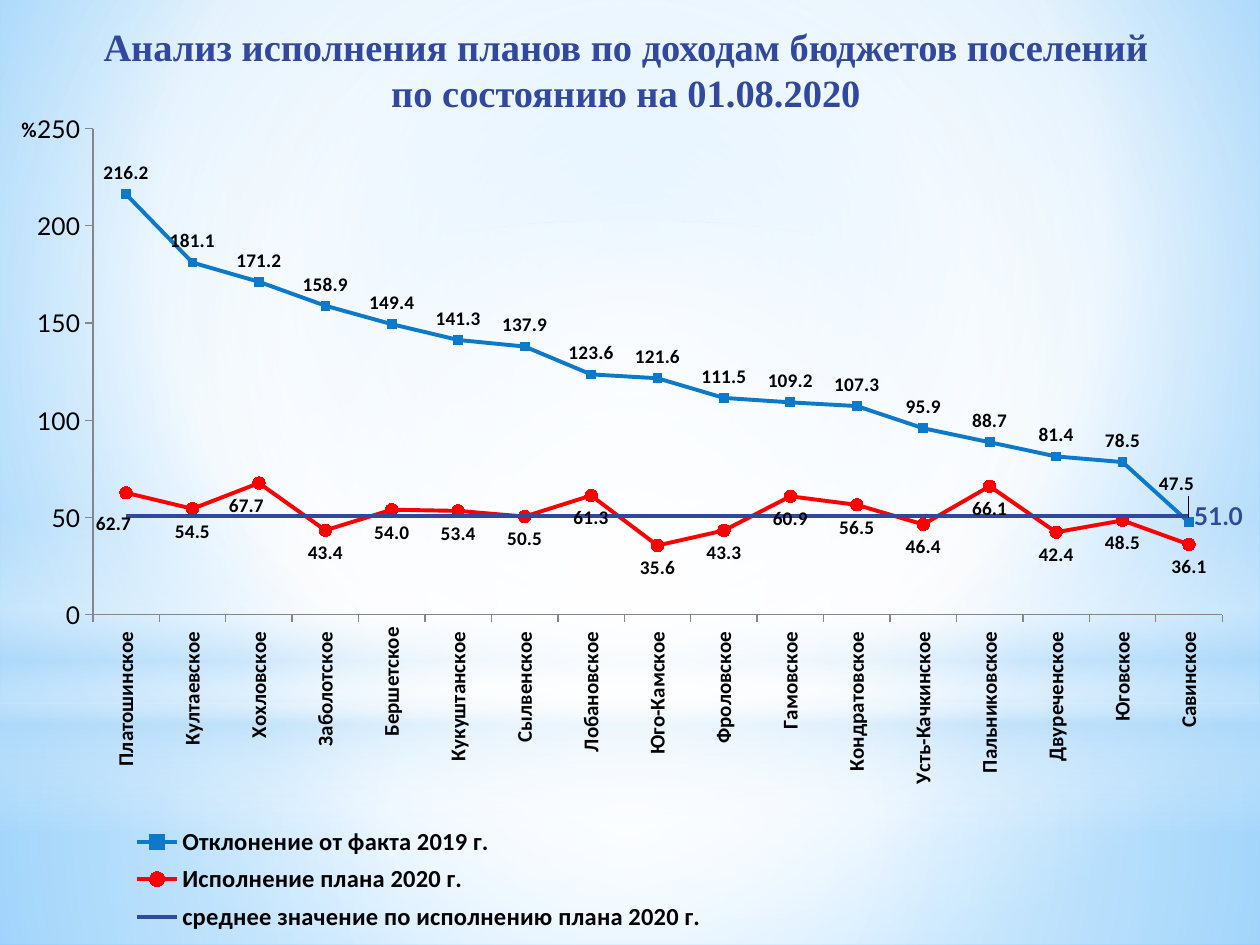
from lxml.etree import SubElement
from pptx import Presentation
from pptx.chart.data import CategoryChartData
from pptx.dml.color import RGBColor
from pptx.enum.chart import (XL_CHART_TYPE, XL_LABEL_POSITION, XL_LEGEND_POSITION,
                             XL_MARKER_STYLE, XL_TICK_MARK)
from pptx.enum.shapes import MSO_SHAPE
from pptx.enum.text import MSO_ANCHOR, MSO_AUTO_SIZE, PP_ALIGN
from pptx.oxml import parse_xml
from pptx.oxml.ns import qn
from pptx.util import Pt

COLORS = {"sky": "9ED5FF", "deep": "5BB9FF", "pale": "B4DCFA", "white": "FFFFFF",
          "navy": "31489F", "blue": "0D79CA", "red": "FF0000", "black": "000000",
          "axis": "868686"}
A_NS = "http://schemas.openxmlformats.org/drawingml/2006/main"
CENTRE = (50, 50, 50, 50)
LABEL_FONT = {"name": "Calibri", "size": Pt(11), "bold": True}

SETTLEMENTS = ["Платошинское ", "Култаевское ", "Хохловское ", "Заболотское ", "Бершетское",
               "Кукуштанское ", "Сылвенское ", "Лобановское ", "Юго-Камское ", "Фроловское ",
               "Гамовское ", "Кондратовское ", "Усть-Качкинское ", "Пальниковское ",
               "Двуреченское ", "Юговское ", "Савинское "]
SERIES = {
    "Отклонение от факта 2019 г.": [216.2, 181.1, 171.2, 158.9, 149.4, 141.3, 137.9, 123.6, 121.6,
                                    111.5, 109.2, 107.3, 95.9, 88.7, 81.4, 78.5, 47.5],
    "Исполнение плана 2020 г.": [62.7, 54.5, 67.7, 43.4, 54, 53.4, 50.5, 61.3, 35.6,
                                 43.3, 60.9, 56.5, 46.4, 66.1, 42.4, 48.5, 36.1],
    "среднее значение по исполнению плана 2020 г.": [51] * len(SETTLEMENTS),
}


def rgb(color):
    return RGBColor.from_string(COLORS[color])


def set_font(font, color="black", **values):
    for name, value in values.items():
        setattr(font, name, value)
    font.color.rgb = rgb(color)


def gradient(stops, focus=None):
    """Gradient from (position, colour, opacity) stops: round a focus, or top to bottom."""
    gs = "".join(f'<a:gs pos="{pos * 1000}"><a:srgbClr val="{COLORS[color]}">'
                 f'<a:alpha val="{opacity * 1000}"/></a:srgbClr></a:gs>'
                 for pos, color, opacity in stops)
    if focus:
        sides = " ".join(f'{side}="{v * 1000}"' for side, v in zip("ltrb", focus))
        way = f'<a:path path="circle"><a:fillToRect {sides}/></a:path>'
    else:
        way = '<a:lin ang="5400000" scaled="0"/>'
    return parse_xml(f'<a:gradFill xmlns:a="{A_NS}" rotWithShape="1">'
                     f'<a:gsLst>{gs}</a:gsLst>{way}</a:gradFill>')


def set_layout(parent, index, **values):
    """Manual chart layout, in fractions of the chart."""
    for old in parent.findall(qn("c:layout")):
        parent.remove(old)
    layout = parent.makeelement(qn("c:layout"))
    parent.insert(index, layout)
    manual = SubElement(layout, qn("c:manualLayout"))
    for name, value in values.items():
        SubElement(manual, qn(f"c:{name}")).set("val", str(value))


def add_backdrop(s, w, h):
    fill = s.background.fill
    fill.solid()
    bg_pr = s._element.cSld.bg.bgPr
    bg_pr.replace(bg_pr[0], gradient([(0, "sky", 100), (60, "white", 100), (100, "deep", 100)],
                                     (20, 10, 20, 60)))
    horizon = 401.76
    layers = [
        (MSO_SHAPE.RECTANGLE, horizon, h - horizon, CENTRE,
         [(0, "white", 91), (37, "white", 76), (100, "pale", 79)]),
        (MSO_SHAPE.RECTANGLE, 0, horizon, CENTRE,
         [(0, "white", 89), (48, "white", 62), (100, "pale", 79)]),
        (MSO_SHAPE.RECTANGLE, 296.64, 180, None,
         [(0, "white", 0), (29, "white", 30), (45, "pale", 40), (55, "white", 26),
          (65, "pale", 60), (100, "white", 0)]),
        (MSO_SHAPE.OVAL, 126, horizon, CENTRE, [(0, "white", 100), (56, "white", 0)]),
    ]
    for kind, top, height, focus, stops in layers:
        sp = s.shapes.add_shape(kind, 0, Pt(top), Pt(w), Pt(height))
        sp.shadow.inherit = False
        sp.line.fill.background()
        sp.fill.solid()
        sp_pr = sp._element.spPr
        sp_pr.replace(sp_pr.find(qn("a:solidFill")), gradient(stops, focus))


def add_title(s, x, y, w, h):
    title = s.shapes.title
    title.left, title.top, title.width, title.height = Pt(x), Pt(y), Pt(w), Pt(h)
    s.shapes._spTree.append(title._element)  # in front of the backdrop
    tf = title.text_frame
    for name, value in {"word_wrap": True, "auto_size": MSO_AUTO_SIZE.NONE,
                        "vertical_anchor": MSO_ANCHOR.TOP}.items():
        setattr(tf, name, value)
    tf.text = "Анализ исполнения планов по доходам бюджетов поселений \vпо состоянию на 01.08.2020 "
    p = tf.paragraphs[0]
    p.alignment = PP_ALIGN.CENTER
    for r in p.runs:
        set_font(r.font, "navy", name="Times New Roman", size=Pt(22), bold=True)


def format_axes(chart):
    cat, val = chart.category_axis, chart.value_axis
    for axis in (cat, val):
        axis.has_major_gridlines = False
        axis.major_tick_mark = XL_TICK_MARK.OUTSIDE
        axis.format.line.color.rgb = rgb("axis")
        axis.format.line.width = Pt(0.75)
    set_font(cat.tick_labels.font, name="Calibri", size=Pt(12), bold=True)
    cat._element.find(qn("c:txPr")).find(qn("a:bodyPr")).set("rot", "-5400000")

    val.minimum_scale, val.maximum_scale, val.major_unit = 0, 250, 50
    val.tick_labels.number_format = "#,##0"
    val.tick_labels.number_format_is_linked = False
    set_font(val.tick_labels.font, name="Lato", size=Pt(14), bold=False)
    tf = val.axis_title.text_frame
    tf.text = "%"
    set_font(tf.paragraphs[0].runs[0].font, name="Calibri", size=Pt(12), bold=True)
    tf._txBody.find(qn("a:bodyPr")).set("rot", "0")
    set_layout(val.axis_title._element, 1, xMode="edge", yMode="edge", x=0.01, y=0.02)


def format_series(ser, color, marker, size, position):
    ser.smooth = False
    ser.format.line.color.rgb = rgb(color)
    ser.format.line.width = Pt(2.25)
    ser.marker.style = marker
    if size:
        ser.marker.size = size
        ser.marker.format.fill.solid()
        ser.marker.format.fill.fore_color.rgb = rgb(color)
        ser.marker.format.line.color.rgb = rgb(color)
    labels = ser.data_labels
    labels.show_value = position is not None
    if position is not None:
        labels.position = position
        labels.number_format = "#,##0.0"
        labels.number_format_is_linked = False
        set_font(labels.font, **LABEL_FONT)


def shift_label(ser, index, position, dx, dy):
    label = ser.points[index].data_label
    set_font(label.font, **LABEL_FONT)
    label.position = position
    set_layout(label._get_or_add_dLbl(), 1, x=dx, y=dy)


def add_income_chart(s, x, y, w, h):
    data = CategoryChartData(number_format="#,##0.0")
    data.categories = SETTLEMENTS
    for name, values in SERIES.items():
        data.add_series(name, values)
    chart = s.shapes.add_chart(XL_CHART_TYPE.LINE_MARKERS, Pt(x), Pt(y), Pt(w), Pt(h), data).chart
    chart.has_title = False
    set_font(chart.font, name="Lato", size=Pt(18))
    chart.plots[0].vary_by_categories = False
    set_layout(chart._chartSpace.chart.plotArea, 0, layoutTarget="inner", xMode="edge",
               yMode="edge", x=0.07, y=0.04, w=0.9, h=0.57)
    format_axes(chart)

    # Lines and their labels
    deviation, execution, average = chart.plots[0].series
    above, below = XL_LABEL_POSITION.ABOVE, XL_LABEL_POSITION.BELOW
    format_series(deviation, "blue", XL_MARKER_STYLE.SQUARE, 5, above)
    format_series(execution, "red", XL_MARKER_STYLE.CIRCLE, 7, below)
    format_series(average, "navy", XL_MARKER_STYLE.NONE, None, None)
    shift_label(deviation, 16, above, -0.01, -0.02)
    shift_label(execution, 0, below, -0.01, 0.01)
    shift_label(execution, 2, below, -0.01, 0)
    average_label = average.points[16].data_label
    set_font(average_label.font, "navy", name="Lato", size=Pt(14), bold=True)
    average_label.position = XL_LABEL_POSITION.RIGHT

    # Legend, one entry a line
    chart.has_legend = True
    legend = chart.legend
    legend.position = XL_LEGEND_POSITION.BOTTOM
    legend.include_in_layout = False
    set_font(legend.font, name="Calibri", size=Pt(14), bold=True)
    set_layout(legend._element, 1, xMode="edge", yMode="edge", x=0.08, y=0.85, w=0.5, h=0.14)


def main():
    prs = Presentation()
    prs.slide_width, prs.slide_height = Pt(720), Pt(540)
    s = prs.slides.add_slide(prs.slide_layouts[5])
    add_backdrop(s, 720, 540)
    add_title(s, 14.4, 9.36, 691.92, 77.04)
    add_income_chart(s, 2.88, 54, 717.12, 487.44)
    prs.save("out.pptx")


if __name__ == "__main__":
    main()
